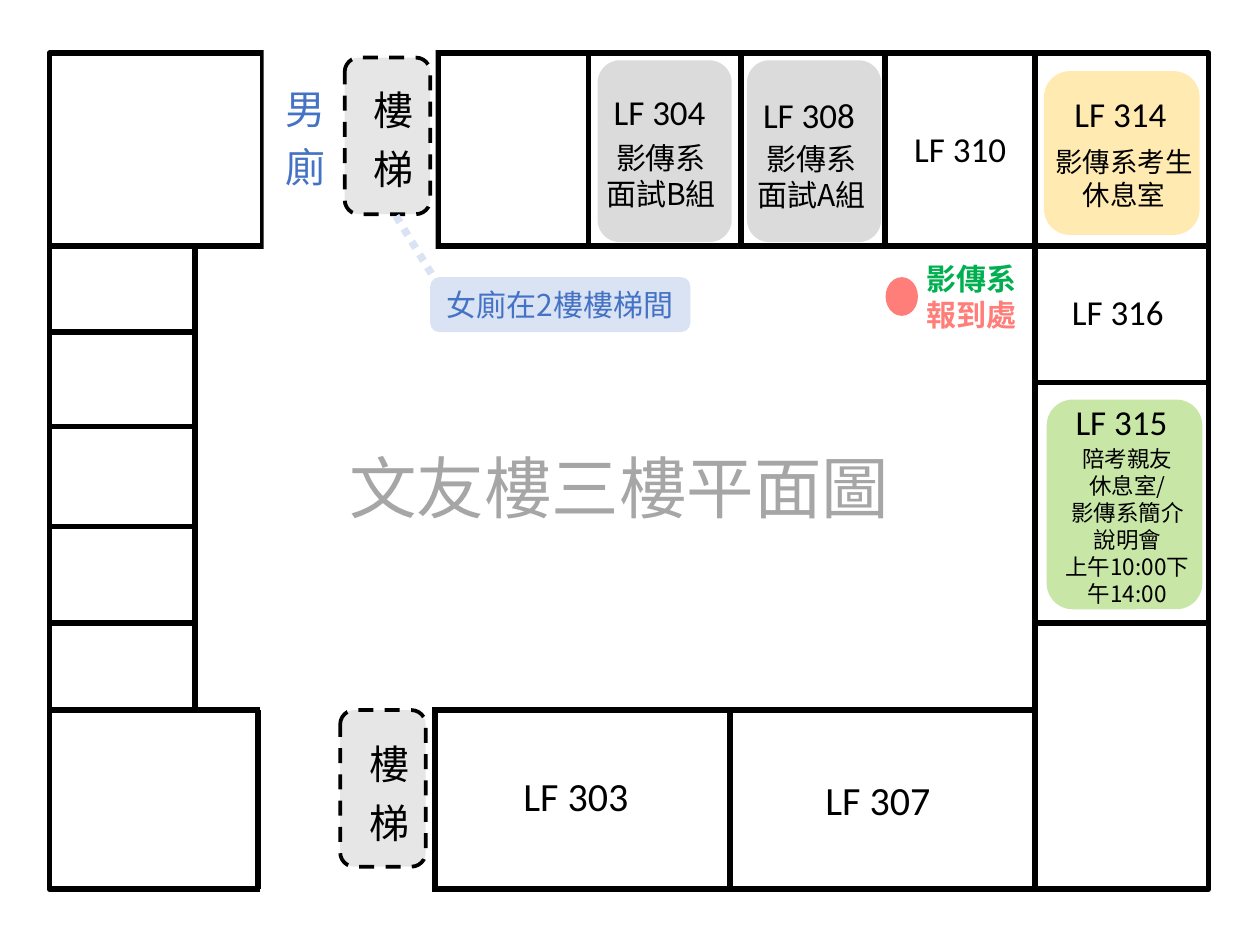
from lxml.etree import SubElement
from pptx import Presentation
from pptx.dml.color import RGBColor as RGB
from pptx.enum.dml import MSO_LINE as Dash
from pptx.enum.shapes import MSO_CONNECTOR as Link, MSO_SHAPE as Kind
from pptx.enum.text import MSO_ANCHOR as Anchor, PP_ALIGN as Align
from pptx.oxml.ns import qn
from pptx.util import Inches, Pt

HEX = {
    "black": "000000", "white": "FFFFFF", "title": "A6A6A6",
    "stair": "E7E6E6", "room": "DBDBDB", "lounge": "FFD966",
    "family": "92D050", "note": "DAE3F3", "blue": "4472C4",
    "green": "00B050", "coral": "FF7E79",
}
INK = {name: RGB.from_string(code) for name, code in HEX.items()}
LATIN, CJK = "Calibri", "Noto Sans CJK SC"

deck = Presentation()
deck.slide_width, deck.slide_height = Inches(14), Inches(10.5)
slide = deck.slides.add_slide(deck.slide_layouts[6])
shapes = slide.shapes


def add_block(kind, box, fill=None, alpha=None):
    """Add a borderless shape, with optional fill and opacity in percent."""
    shape = shapes.add_shape(kind, *map(Inches, box))
    shape.shadow.inherit = False
    shape.line.fill.background()
    if fill is None:
        shape.fill.background()
    else:
        shape.fill.solid()
        shape.fill.fore_color.rgb = INK[fill]
    if alpha:
        tint = shape.fill._xPr.find(".//" + qn("a:srgbClr"))
        SubElement(tint, qn("a:alpha"), val=str(alpha * 1000))
    return shape


def write(frame, rows, font=CJK, align=Align.CENTER, gap=None):
    """Fill a frame with (text, size, colour) rows; gap spreads letters."""
    frame.word_wrap = True
    for i, (text, size, ink) in enumerate(rows):
        para = frame.paragraphs[0] if i == 0 else frame.add_paragraph()
        para.text = text
        para.alignment = align
        para.font.size = Pt(size)
        para.font.name = font
        para.font.color.rgb = INK[ink]
        SubElement(para.font._element, qn("a:ea"), typeface=font)
        if gap:
            para.font._element.set("spc", str(gap * 100))


# Room colours
add_block(Kind.ROUNDED_RECTANGLE, (11.63, 4.44, 1.73, 2.33), "family", 50)
add_block(Kind.ROUNDED_RECTANGLE, (11.6, 0.79, 1.73, 1.82), "lounge", 50)
for x in (6.64, 8.3):
    add_block(Kind.ROUNDED_RECTANGLE, (x, 0.67, 1.49, 2.02), "room")

# Outer wall and inner walls; the white gaps open the wall at the stairs
left, top, right, foot = 0.55, 0.59, 13.43, 9.88
north, south, west, east = 2.73, 7.89, 2.17, 11.5
outer = add_block(Kind.RECTANGLE, (left, top, right - left, foot - top))
outer.line.color.rgb = INK["black"]
outer.line.width = Pt(4.5)

walls = [(left, north, right, north), (left, south, east, south),
         (east, top, east, foot), (west, north, west, south)]
walls += [(east, y, right, y) for y in (4.25, 6.92)]
walls += [(x, top, x, north) for x in (2.92, 4.87, 6.54, 8.23, 9.83)]
walls += [(left, y, west, y) for y in (3.69, 4.74, 5.85, 6.92)]
ends = [(x, south, x, foot) for x in (2.87, 4.83, 8.11)]
gaps = [(2.93, 0.48), (2.89, 7.73)]
stairs = [(3.83, 0.64), (3.78, 7.89)]

links = []
for wall in walls:
    links.append(shapes.add_connector(Link.STRAIGHT, *map(Inches, wall)))
for gap, stair in zip(gaps, stairs):
    add_block(Kind.RECTANGLE, (*gap, 1.91, 2.35), "white")
    step = add_block(Kind.ROUNDED_RECTANGLE, (*stair, 0.95, 1.74), "stair")
    step.line.color.rgb = INK["black"]
    step.line.width = Pt(3)
    step.line.dash_style = Dash.DASH
for wall in ends:
    links.append(shapes.add_connector(Link.STRAIGHT, *map(Inches, wall)))
for link in links:
    link.line.color.rgb = INK["black"]
    link.line.width = Pt(4.5)

# Note on the stairs and check-in spot
note = add_block(Kind.ROUNDED_RECTANGLE, (4.78, 3.08, 2.89, 0.61), "note")
note.text_frame.vertical_anchor = Anchor.MIDDLE
write(note.text_frame, [("女廁在2樓樓梯間", 24, "blue")])
lead = shapes.add_connector(
    Link.STRAIGHT, *map(Inches, (4.4, 2.4, 4.83, 3.1)))
lead.line.color.rgb = INK["note"]
lead.line.width = Pt(6)
lead.line.dash_style = Dash.ROUND_DOT
for link in links + [lead]:
    SubElement(link._element.spPr, qn("a:effectLst"))
add_block(Kind.OVAL, (9.84, 3.08, 0.36, 0.43), "coral")

# Vertical labels
for x, y, text, ink in [(3.93, 0.91, "樓梯", "black"),
                        (2.96, 0.89, "男廁", "blue"),
                        (3.89, 8.17, "樓梯", "black")]:
    box = shapes.add_textbox(*map(Inches, (x, y, 0.74, 1.33)))
    box.text_frame._txBody.bodyPr.set("vert", "eaVert")
    write(box.text_frame, [(text, 32, ink)], align=Align.LEFT, gap=15)

# Room numbers
for x, y, wide, size, align, text in [
    (6.72, 0.96, 1.34, 28, Align.LEFT, "LF 304"),
    (8.38, 0.99, 1.34, 28, Align.LEFT, "LF 308"),
    (10.06, 1.37, 1.34, 28, Align.LEFT, "LF 310"),
    (11.84, 0.98, 1.34, 28, Align.LEFT, "LF 314"),
    (11.75, 3.18, 1.34, 28, Align.CENTER, "LF 316"),
    (11.79, 4.4, 1.34, 28, Align.CENTER, "LF 315"),
    (5.05, 8.52, 2.7, 32, Align.CENTER, "LF 303"),
    (8.53, 8.57, 2.45, 32, Align.CENTER, "LF 307"),
]:
    box = shapes.add_textbox(*map(Inches, (x, y, wide, size / 50)))
    write(box.text_frame, [(text, size, "black")], LATIN, align)

# Room uses
for spot, size, lines in [
    ((6.46, 1.5, 1.77, 0.91), 24, ["影傳系", "面試B組"]),
    ((8.13, 1.51, 1.77, 0.91), 24, ["影傳系", "面試A組"]),
    ((11.57, 1.56, 1.84, 0.84), 22, ["影傳系考生", "休息室"]),
    ((11.72, 4.89, 1.61, 1.92), 18,
     ["陪考親友", "休息室/", "影傳系簡介", "說明會", "上午10:00下午14:00"]),
]:
    box = shapes.add_textbox(*map(Inches, spot))
    write(box.text_frame, [(line, size, "black") for line in lines])

desk = shapes.add_textbox(*map(Inches, (10.2, 2.84, 1.23, 0.91)))
write(desk.text_frame, [("影傳系", 24, "green"), ("報到處", 24, "coral")],
      align=Align.LEFT)
for para in desk.text_frame.paragraphs:
    para.font.bold = True

title = shapes.add_textbox(*map(Inches, (3.78, 4.91, 6.26, 1.01)))
write(title.text_frame, [("文友樓三樓平面圖", 54, "title")], align=Align.LEFT)

deck.save("out.pptx")
